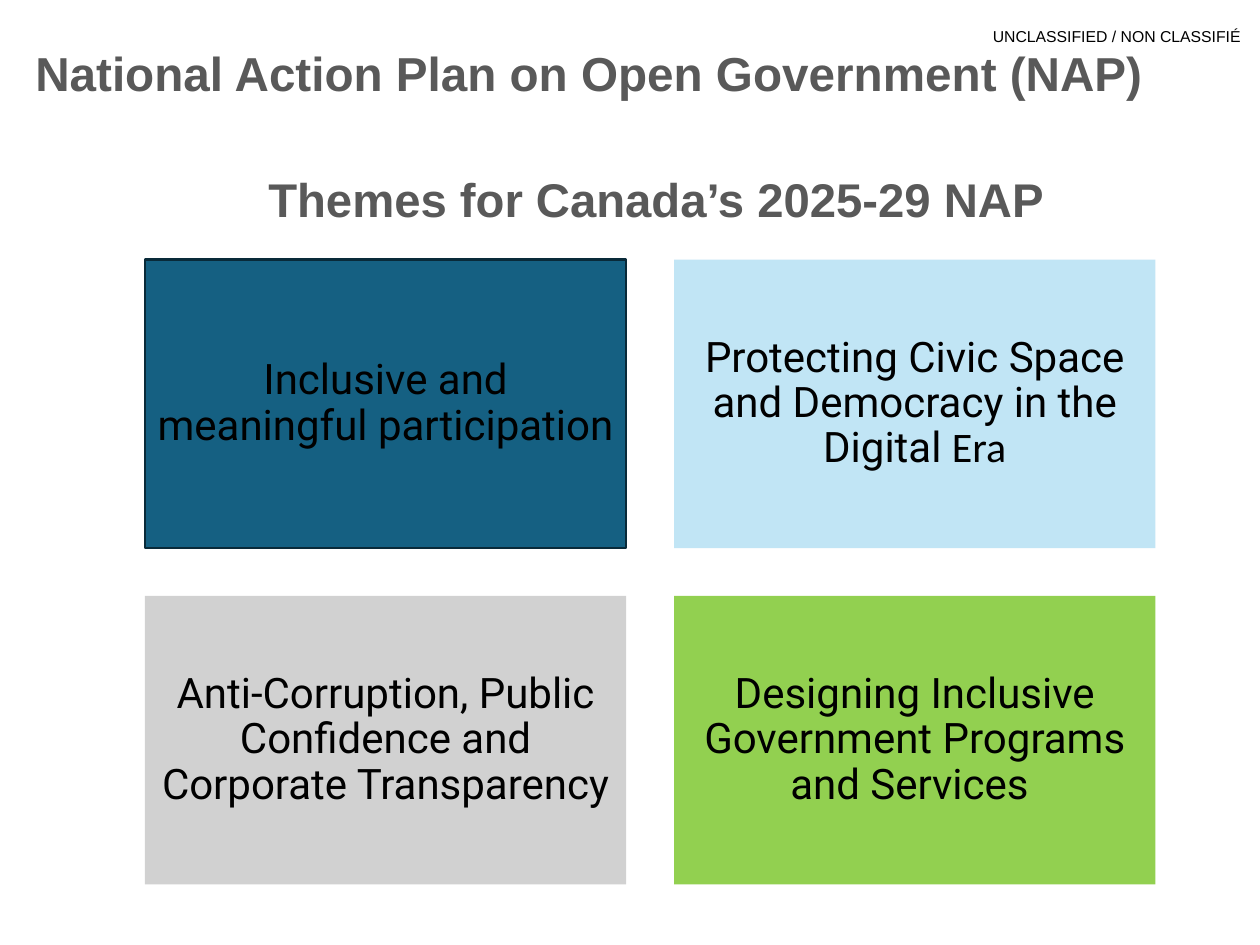
import pptx
import pptx.util
import pptx.dml.color
import pptx.enum.shapes
import pptx.enum.text

Inches = pptx.util.Inches
ALIGN = pptx.enum.text.PP_ALIGN

THEME = {
    "head": {"font": "Arial", "color": "595959", "bold": True},
    "mark": {"font": "Arial", "color": "000000", "bold": False},
    "card": {"font": "Roboto", "color": "000000", "bold": False},
    "sizes": {"mark": 9, "title": 27.2, "sub": 27, "card": 24},
    "edge": "092A39",
}

# text, style, size name, (left, top, width, height), line spacing
LINES = [
    ("UNCLASSIFIED / NON CLASSIFIÉ", "mark", "mark", (7.88, 0.21, 2, 0.15), 1),
    ("National Action Plan on Open Government (NAP)", "head", "title",
     (0.28, 0.4, 9.01, 0.72), 0.9),
    ("Themes for Canada’s 2025-29 NAP", "head", "sub",
     (2.13, 1.4, 6.43, 0.5), 0.9),
]

# runs as (text, font or None for the style's own), fill, outlined
CARDS = [
    ([("Inclusive and meaningful participation", None)], "156082", True),
    ([("Protecting Civic Space and Democracy in the Digital ", None),
      ("Era", "Calibri")], "C1E5F5", False),
    ([("Anti-Corruption, Public Confidence and Corporate Transparency", None)],
     "D1D1D1", False),
    ([("Designing Inclusive Government Programs and Services ", None)],
     "92D050", False),
]
LEFT, TOP, WIDTH, HEIGHT, GAP, COLS = 1.15, 2.06, 3.82, 2.29, 0.38, 2


def color(code):
    return pptx.dml.color.RGBColor.from_string(code)


def write(frame, runs, style, size, spacing, inset):
    frame.word_wrap = True
    frame.margin_left = frame.margin_right = Inches(inset)
    frame.margin_top = frame.margin_bottom = Inches(inset)
    para = frame.paragraphs[0]
    para.line_spacing = spacing
    look = THEME[style]
    for text, face in runs:
        run = para.add_run()
        run.text = text
        run.font.name = face or look["font"]
        run.font.size = pptx.util.Pt(THEME["sizes"][size])
        run.font.bold = look["bold"]
        run.font.color.rgb = color(look["color"])
    return para


def add_line(slide, text, style, size, place, spacing):
    box = slide.shapes.add_textbox(*map(Inches, place))
    write(box.text_frame, [(text, None)], style, size, spacing, 0)


def add_card(slide, index, runs, fill, outlined):
    row, col = divmod(index, COLS)
    place = (LEFT + col * (WIDTH + GAP), TOP + row * (HEIGHT + GAP), WIDTH, HEIGHT)
    card = slide.shapes.add_shape(
        pptx.enum.shapes.MSO_SHAPE.RECTANGLE, *map(Inches, place))
    card.shadow.inherit = False
    card.fill.solid()
    card.fill.fore_color.rgb = color(fill)
    if outlined:
        card.line.color.rgb = color(THEME["edge"])
        card.line.width = pptx.util.Pt(1.5)
    else:
        card.line.fill.background()
    frame = card.text_frame
    frame.vertical_anchor = pptx.enum.text.MSO_ANCHOR.MIDDLE
    para = write(frame, runs, "card", "card", 0.9, 0.1)
    para.alignment = ALIGN.CENTER


def main():
    deck = pptx.Presentation()
    deck.slide_width, deck.slide_height = Inches(10), Inches(7.5)
    slide = deck.slides.add_slide(deck.slide_layouts[6])
    for line in LINES:
        add_line(slide, *line)
    for index, card in enumerate(CARDS):
        add_card(slide, index, *card)
    deck.save("out.pptx")


if __name__ == "__main__":
    main()
